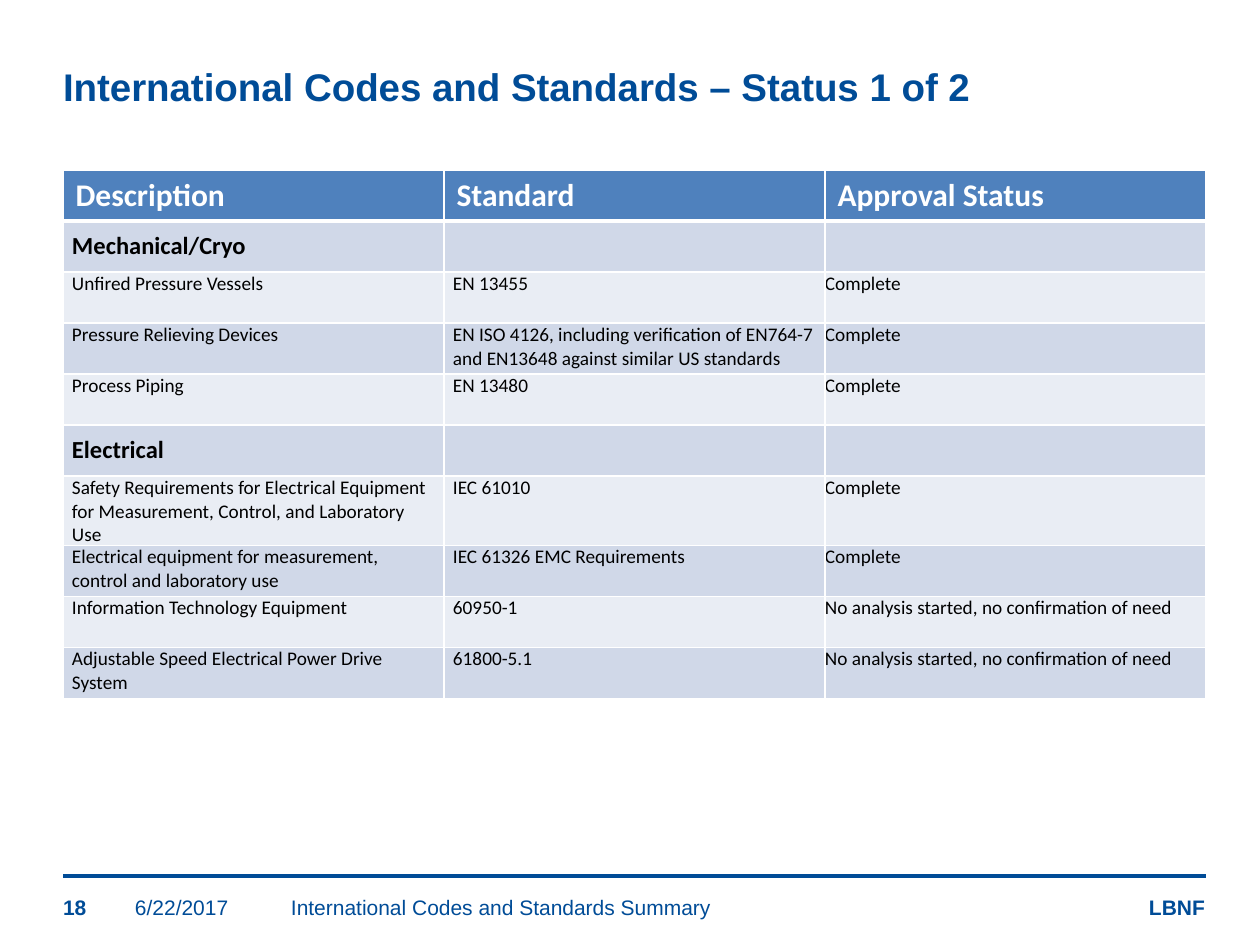
from dataclasses import dataclass

from lxml.etree import SubElement
from pptx import Presentation
from pptx.dml.color import RGBColor
from pptx.enum.shapes import MSO_CONNECTOR as Connector
from pptx.enum.text import MSO_ANCHOR as Anchor
from pptx.oxml.ns import qn
from pptx.util import Emu, Pt

PX_PER_INCH = 126
BLUE, WHITE, BLACK = "004C97", "FFFFFF", "000000"
HEADER_FILL, BAND_FILLS = "4F81BD", ("D0D8E8", "E9EDF4")
LEFT, RIGHT = 63, 1206
TABLE_TOP, COLUMN_WIDTH, ROW_HEIGHT = 170, 381, 51


@dataclass
class Label:
    text: str
    left: int
    top: int
    width: int
    height: int
    size: int = 12
    bold: bool = False
    anchor: Anchor = Anchor.BOTTOM
    top_inset: int = 0


@dataclass
class CellStyle:
    size: int
    bold: bool
    color: str
    anchor: Anchor = Anchor.TOP


HEADER = CellStyle(18, True, WHITE)
SECTION = CellStyle(14, True, BLACK, Anchor.MIDDLE)
ENTRY = CellStyle(11, False, BLACK)

LABELS = [
    Label("LBNF", 1149, 893, 58, 27, bold=True),
    Label("International Codes and Standards – Status 1 of 2", LEFT, 59, 1143, 78,
          size=22, bold=True, anchor=Anchor.TOP, top_inset=4),
    Label("6/22/2017", 135, 895, 156, 25),
    Label("International Codes and Standards Summary", 291, 895, 774, 25),
    Label("18", LEFT, 895, 72, 25, bold=True),
]

ROWS = [
    ("Description", "Standard", "Approval Status"),
    ("Mechanical/Cryo", "", ""),
    ("Unfired Pressure Vessels", "EN 13455", "Complete"),
    ("Pressure Relieving Devices",
     "EN ISO 4126, including verification of EN764-7 and EN13648 against similar US standards",
     "Complete"),
    ("Process Piping", "EN 13480", "Complete"),
    ("Electrical", "", ""),
    ("Safety Requirements for Electrical Equipment for Measurement, Control, and Laboratory Use",
     "IEC 61010", "Complete"),
    ("Electrical equipment for measurement, control and laboratory use",
     "IEC 61326 EMC Requirements", "Complete"),
    ("Information Technology Equipment", "60950-1",
     "No analysis started, no confirmation of need"),
    ("Adjustable Speed Electrical Power Drive System", "61800-5.1",
     "No analysis started, no confirmation of need"),
]


def px(length: int) -> Emu:
    return Emu(round(length * 914400 / PX_PER_INCH))


def rgb(color: str) -> RGBColor:
    return RGBColor.from_string(color)


def add_run(paragraph, text: str, font_name: str, size: int, bold: bool, color: str) -> None:
    run = paragraph.add_run()
    run.text = text
    run.font.name = font_name
    run.font.size = Pt(size)
    run.font.bold = bold
    run.font.color.rgb = rgb(color)


def add_label(slide, label: Label) -> None:
    shape = slide.shapes.add_textbox(
        px(label.left), px(label.top), px(label.width), px(label.height))
    frame = shape.text_frame
    frame.word_wrap = True
    frame.vertical_anchor = label.anchor
    frame.margin_left = frame.margin_right = frame.margin_bottom = 0
    frame.margin_top = px(label.top_inset)
    add_run(frame.paragraphs[0], label.text, "Arial", label.size, label.bold, BLUE)


def add_footer_rule(slide) -> None:
    rule = slide.shapes.add_connector(
        Connector.STRAIGHT, px(LEFT), px(876), px(RIGHT), px(876))
    rule.line.color.rgb = rgb(BLUE)
    rule.line.width = Pt(2)
    SubElement(rule._element.spPr, qn("a:effectLst"))


def set_borders(cell, top: int, bottom: int) -> None:
    """Draw white cell borders; call before the fill, which must follow them."""
    properties = cell._tc.get_or_add_tcPr()
    for side, width in (("L", 1), ("R", 1), ("T", top), ("B", bottom)):
        line = SubElement(properties, qn(f"a:ln{side}"), w=str(Pt(width)))
        fill = SubElement(line, qn("a:solidFill"))
        SubElement(fill, qn("a:srgbClr"), val=WHITE)


def fill_cell(cell, text: str, row: int, column: int, style: CellStyle) -> None:
    set_borders(cell, top=3 if row == 1 else 1, bottom=3 if row == 0 else 1)
    cell.fill.solid()
    cell.fill.fore_color.rgb = rgb(BAND_FILLS[(row - 1) % 2] if row else HEADER_FILL)
    cell.vertical_anchor = style.anchor
    if row:
        cell.margin_left = cell.margin_right = px(0 if column == 2 else 9)
        cell.margin_top = cell.margin_bottom = 0
    if text:
        add_run(cell.text_frame.paragraphs[0], text, "Calibri",
                style.size, style.bold, style.color)


def add_standards_table(slide) -> None:
    columns = len(ROWS[0])
    table = slide.shapes.add_table(
        len(ROWS), columns, px(LEFT), px(TABLE_TOP),
        px(columns * COLUMN_WIDTH), px(len(ROWS) * ROW_HEIGHT)).table
    for column in table.columns:
        column.width = px(COLUMN_WIDTH)
    for row, texts in enumerate(ROWS):
        table.rows[row].height = px(ROW_HEIGHT)
        style = HEADER if row == 0 else ENTRY if texts[1] else SECTION
        for column, text in enumerate(texts):
            fill_cell(table.cell(row, column), text, row, column, style)


def main() -> None:
    presentation = Presentation()
    presentation.slide_width = px(1260)
    presentation.slide_height = px(945)
    slide = presentation.slides.add_slide(presentation.slide_layouts[6])
    add_footer_rule(slide)
    for label in LABELS:
        add_label(slide, label)
    add_standards_table(slide)
    presentation.save("out.pptx")


if __name__ == "__main__":
    main()
